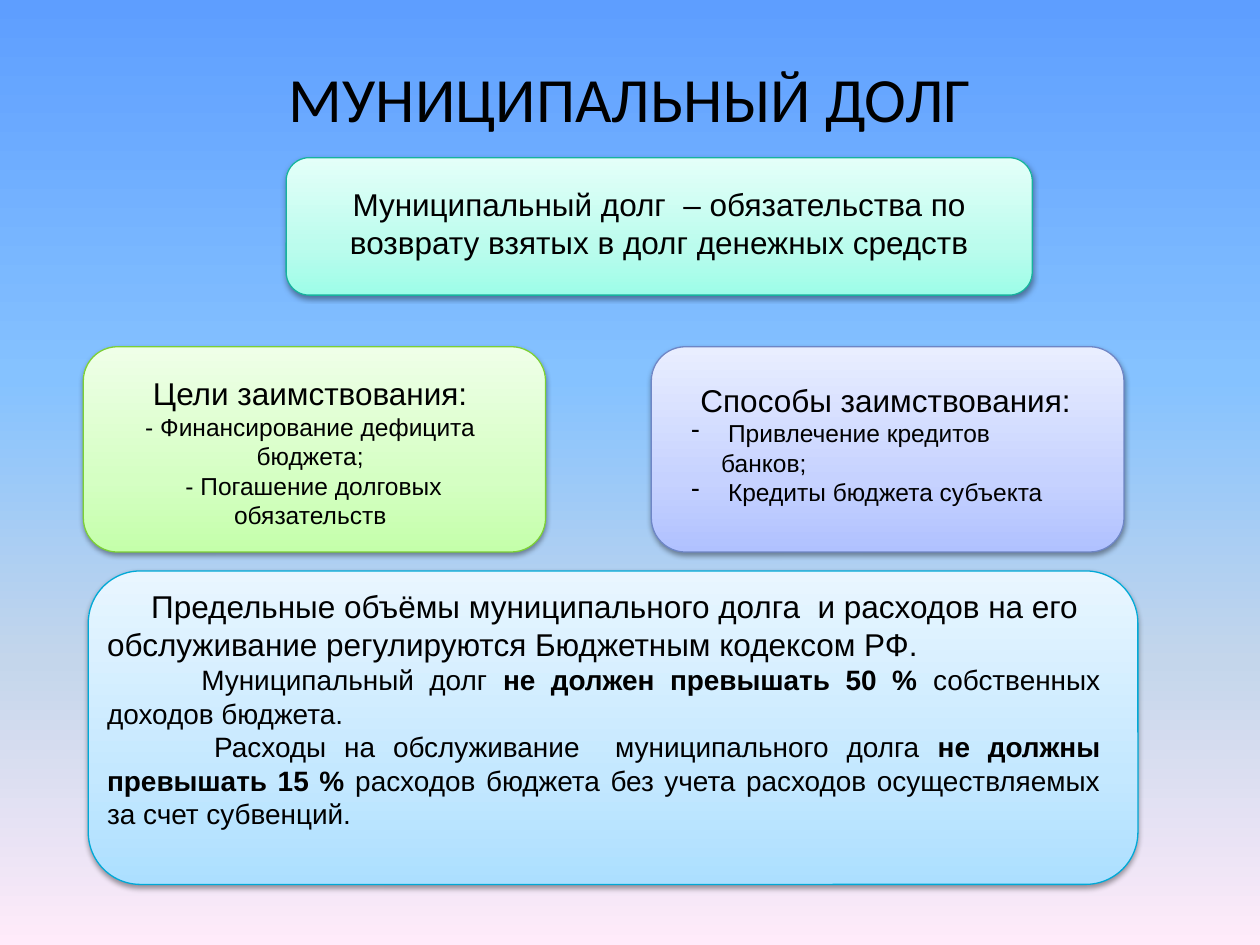
import lxml.etree
import pptx
import pptx.dml.color
import pptx.enum.shapes
import pptx.enum.text
import pptx.oxml.ns
import pptx.util

Cm = pptx.util.Cm
Pt = pptx.util.Pt
qn = pptx.oxml.ns.qn
ALIGN = pptx.enum.text.PP_ALIGN


def rgb(value):
    return pptx.dml.color.RGBColor.from_string(value)


def add_color(parent, value):
    return lxml.etree.SubElement(parent, qn("a:srgbClr"), val=value)


def set_gradient(fill, element, stops, angle):
    """Fill with (percent, colour) stops; the angle runs counter-clockwise."""
    fill.gradient()
    fill.gradient_angle = angle
    stop_list = next(element.iter(qn("a:gsLst")))
    for old in list(stop_list):
        stop_list.remove(old)
    for percent, value in stops:
        stop = lxml.etree.SubElement(stop_list, qn("a:gs"), pos=str(percent * 1000))
        add_color(stop, value)


def add_soft_shadow(sp):
    sp.shadow.inherit = False
    effects = next(sp.element.iter(qn("a:effectLst")))
    shadow = lxml.etree.SubElement(
        effects, qn("a:outerShdw"), blurRad=str(Pt(3.1)), dist=str(Pt(1.6)),
        dir="5400000", rotWithShape="0")
    color = add_color(shadow, "000000")
    lxml.etree.SubElement(color, qn("a:alpha"), val="38000")


def add_panel(s, box, colors, line):
    sp = s.shapes.add_shape(
        pptx.enum.shapes.MSO_SHAPE.ROUNDED_RECTANGLE, *map(Cm, box))
    set_gradient(sp.fill, sp.element, zip((0, 35, 100), colors), 90)
    sp.line.color.rgb = rgb(line)
    sp.line.width = Pt(0.75)
    add_soft_shadow(sp)


def add_text_frame(s, box, inset, size):
    left, top = box[0] + inset[0], box[1] + inset[1]
    tf = s.shapes.add_textbox(Cm(left), Cm(top), *map(Cm, size)).text_frame
    tf.word_wrap = True
    return tf


def add_run(p, text, size, bold=False, font="Arial"):
    r = p.add_run()
    r.text = text
    r.font.name = font
    r.font.size = Pt(size)
    r.font.bold = bold
    r.font.color.rgb = rgb("000000")


def add_paragraph(tf, align=ALIGN.LEFT, indent=0):
    """Return the next paragraph; the indent moves its first line only."""
    p = tf.paragraphs[0]
    if p.runs:
        p = tf.add_paragraph()
    p.alignment = align
    if indent:
        p._p.get_or_add_pPr().set("indent", str(Cm(indent)))
    return p


def add_dash(p, hang):
    """Hang the paragraph on a dash bullet."""
    props = p._p.get_or_add_pPr()
    props.set("marL", str(Cm(hang)))
    props.set("marR", str(Cm(0.3)))
    props.set("indent", str(-Cm(hang)))
    lxml.etree.SubElement(props, qn("a:buFontTx"))
    lxml.etree.SubElement(props, qn("a:buChar"), char="-")


def add_title(s, box):
    title = s.shapes.title
    title.left, title.top, title.width, title.height = map(Cm, box)
    tf = title.text_frame
    tf.vertical_anchor = pptx.enum.text.MSO_ANCHOR.MIDDLE
    add_run(add_paragraph(tf, ALIGN.CENTER), "МУНИЦИПАЛЬНЫЙ ДОЛГ", 36, font="Calibri")


def add_definition(s, box):
    add_panel(s, box, ("9DFDE8", "BBFCED", "E4FFF9"), "16B39E")
    tf = add_text_frame(s, box, (0.18, 0.43), (14.68, 1.8))
    add_run(add_paragraph(tf, ALIGN.CENTER),
            "Муниципальный долг  – обязательства по возврату взятых в долг "
            "денежных средств", 18)


def add_goals(s, box):
    add_panel(s, box, ("C4FFAA", "D5FFC3", "EFFFE8"), "7CD036")
    tf = add_text_frame(s, box, (0.23, 0.43), (8.69, 2.82))
    add_run(add_paragraph(tf, ALIGN.CENTER), "Цели заимствования:", 18)
    p = add_paragraph(tf, ALIGN.CENTER, indent=-1.37)
    add_run(p, "- Финансирование дефицита", 14)
    p.add_line_break()
    add_run(p, "бюджета;", 14)
    add_run(add_paragraph(tf, ALIGN.CENTER), " - Погашение долговых обязательств", 14)


def add_methods(s, box):
    add_panel(s, box, ("B0C1FF", "C6D2FF", "E9EEFF"), "6E86C6")
    tf = add_text_frame(s, box, (0.56, 0.56), (8.33, 2.24))
    add_run(add_paragraph(tf, ALIGN.CENTER), "Способы заимствования:", 18)
    for text in (" Привлечение кредитов банков;", " Кредиты бюджета субъекта"):
        p = add_paragraph(tf)
        add_dash(p, 0.6)
        add_run(p, text, 14)


def add_limits(s, box):
    add_panel(s, box, ("ACDFFF", "C4E8FF", "E9F6FF"), "00A9D7")
    tf = add_text_frame(s, box, (0.13, 0.2), (20.52, 5.21))
    add_run(add_paragraph(tf, indent=0.89),
            "Предельные объёмы муниципального долга  и расходов на его "
            "обслуживание регулируются Бюджетным кодексом РФ.", 18)
    limits = (
        (1.9, "Муниципальный долг ", "не должен превышать 50 % ",
         "собственных доходов бюджета."),
        (2.16, "Расходы на обслуживание  муниципального долга ",
         "не должны превышать 15 % ",
         "расходов бюджета без учета расходов осуществляемых за счет субвенций."),
    )
    for indent, subject, limit, base in limits:
        p = add_paragraph(tf, ALIGN.JUSTIFY, indent)
        add_run(p, subject, 16)
        add_run(p, limit, 16, bold=True)
        add_run(p, base, 16)


def main():
    prs = pptx.Presentation()
    prs.slide_width, prs.slide_height = Cm(25.4), Cm(19.05)
    s = prs.slides.add_slide(prs.slide_layouts[5])
    sky = ((0, "5E9EFF"), (40, "85C2FF"), (70, "C4D6EB"), (100, "FFEBFA"))
    set_gradient(s.background.fill, s.element, sky, 270)
    add_title(s, (1.27, 0.58, 22.86, 2.77))
    add_definition(s, (5.77, 3.18, 15.04, 2.77))
    add_goals(s, (1.68, 6.99, 9.32, 4.14))
    add_methods(s, (13.13, 6.99, 9.53, 4.14))
    add_limits(s, (1.78, 11.51, 21.16, 6.32))
    prs.save("out.pptx")


if __name__ == "__main__":
    main()
